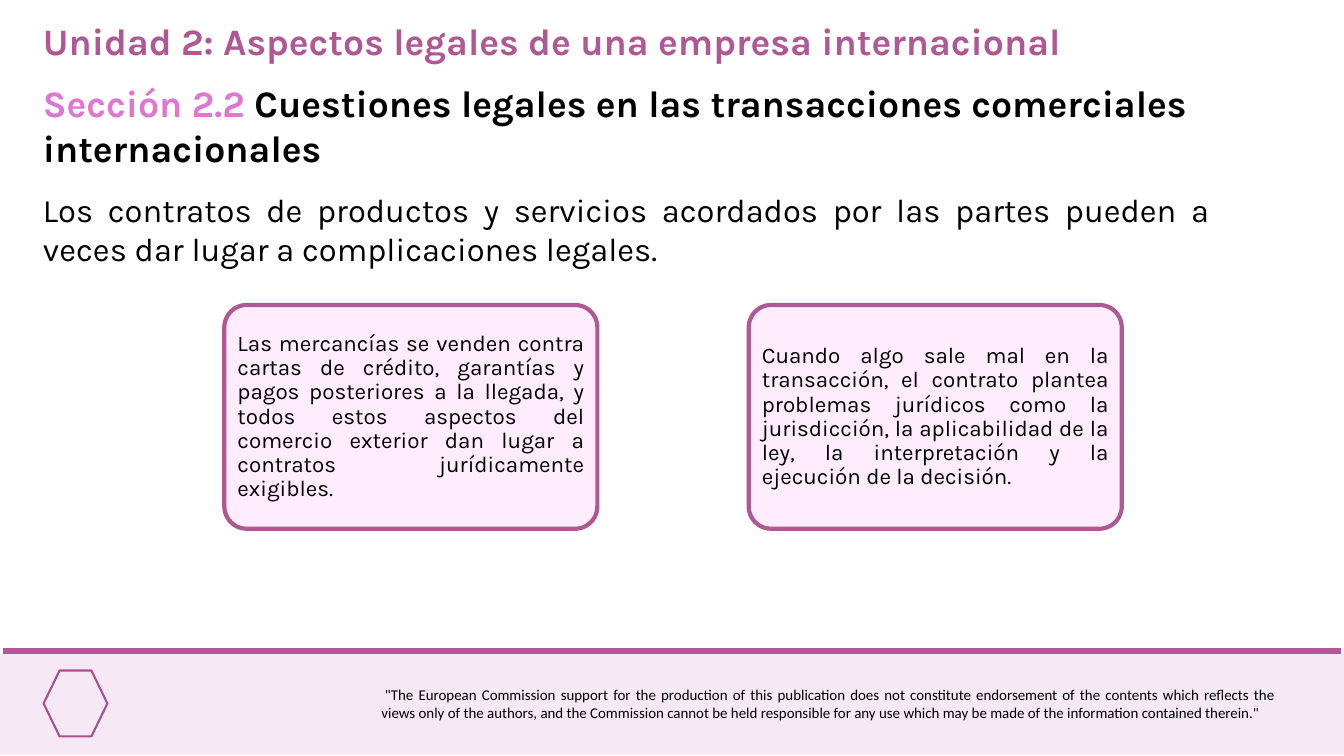
"""Build the slide on legal questions in international trade transactions."""
from dataclasses import dataclass

from lxml import etree
from pptx import Presentation
from pptx.dml.color import RGBColor
from pptx.enum.shapes import MSO_CONNECTOR, MSO_SHAPE
from pptx.enum.text import MSO_ANCHOR, MSO_AUTO_SIZE, PP_ALIGN
from pptx.oxml.ns import qn
from pptx.shapes.autoshape import Shape
from pptx.slide import Slide
from pptx.text.text import TextFrame
from pptx.util import Cm, Pt

LEFT, JUSTIFY = PP_ALIGN.LEFT, PP_ALIGN.JUSTIFY
TOP, MIDDLE = MSO_ANCHOR.TOP, MSO_ANCHOR.MIDDLE
NO_AUTOFIT = MSO_AUTO_SIZE.NONE
STRAIGHT = MSO_CONNECTOR.STRAIGHT
RECTANGLE = MSO_SHAPE.RECTANGLE
ROUNDED = MSO_SHAPE.ROUNDED_RECTANGLE
HEXAGON = MSO_SHAPE.HEXAGON


@dataclass(frozen=True)
class Theme:
    """Colours, fonts and type sizes of the slide."""
    accent: RGBColor = RGBColor(0xB0, 0x58, 0x94)
    emblem: RGBColor = RGBColor(0xAB, 0x4E, 0x8E)
    section: RGBColor = RGBColor(0xE0, 0x76, 0xD1)
    band: RGBColor = RGBColor(0xF6, 0xE9, 0xF5)
    card: RGBColor = RGBColor(0xFF, 0xEC, 0xFC)
    ink: RGBColor = RGBColor(0, 0, 0)
    main_font: str = "Karla"
    note_font: str = "Calibri"
    heading: int = 40
    intro: int = 35
    card_text: int = 24
    note: int = 16


@dataclass(frozen=True)
class Box:
    """Position and size in centimetres."""
    left: float
    top: float
    width: float
    height: float

    def lengths(self) -> tuple[Cm, Cm, Cm, Cm]:
        """Return the four measures as lengths."""
        return Cm(self.left), Cm(self.top), Cm(self.width), Cm(self.height)


@dataclass(frozen=True)
class TextStyle:
    """Paragraph formatting of one text."""
    size: int
    color: RGBColor = Theme.ink
    font: str = Theme.main_font
    bold: bool = False
    align: PP_ALIGN = LEFT
    anchor: MSO_ANCHOR = TOP
    line_spacing: float = 1.0
    indent: float = 0


THEME = Theme()
UNIT_STYLE = TextStyle(THEME.heading, THEME.accent, bold=True)
SECTION_STYLE = TextStyle(THEME.heading, bold=True)
INTRO_STYLE = TextStyle(THEME.intro, align=JUSTIFY)
CARD_STYLE = TextStyle(THEME.card_text, align=JUSTIFY, anchor=MIDDLE, line_spacing=0.9)
NOTE_STYLE = TextStyle(THEME.note, font=THEME.note_font, align=JUSTIFY, indent=0.13)

UNIT = "Unidad 2: Aspectos legales de una empresa internacional"
SECTION_NUMBER = "Sección 2.2 "
SECTION_NAME = "Cuestiones legales en las transacciones comerciales internacionales"
INTRO = (
    "Los contratos de productos y servicios acordados por las partes pueden a veces "
    "dar lugar a complicaciones legales."
)
CARDS = (
    "Las mercancías se venden contra cartas de crédito, garantías y pagos posteriores "
    "a la llegada, y todos estos aspectos del comercio exterior dan lugar a contratos "
    "jurídicamente exigibles.",
    "Cuando algo sale mal en la transacción, el contrato plantea problemas jurídicos "
    "como la jurisdicción, la aplicabilidad de la ley, la interpretación y la ejecución "
    "de la decisión.",
)
DISCLAIMER = (
    '"The European Commission support for the production of this publication does not '
    "constitute endorsement of the contents which reflects the views only of the authors, "
    "and the Commission cannot be held responsible for any use which may be made of the "
    'information contained therein."'
)

SLIDE_WIDTH, SLIDE_HEIGHT = 50.8, 28.58
FIRST_CARD = Box(8.48, 11.53, 14.1, 8.46)
CARD_PITCH = 19.82
RULE_TOP, RULE_MARGIN = 24.61, 0.13


def write(frame: TextFrame, style: TextStyle, *parts: str) -> None:
    """Fill a frame with one paragraph made of the given runs."""
    frame.word_wrap = True
    frame.auto_size = NO_AUTOFIT
    frame.vertical_anchor = style.anchor
    paragraph = frame.paragraphs[0]
    properties = paragraph._p.get_or_add_pPr()
    properties.set("marL", "0")
    properties.set("indent", str(Cm(style.indent)))
    paragraph.alignment = style.align
    paragraph.line_spacing = style.line_spacing
    paragraph.space_before = Pt(0)
    etree.SubElement(properties, qn("a:buNone"))
    font = paragraph.font
    font.name, font.size, font.bold = style.font, Pt(style.size), style.bold
    font.color.rgb = style.color
    for part in parts:
        paragraph.add_run().text = part


def place(shape: Shape, box: Box) -> None:
    """Move and size a placeholder."""
    shape.left, shape.top, shape.width, shape.height = box.lengths()


def add_text(slide: Slide, box: Box, style: TextStyle, *parts: str) -> TextFrame:
    """Add a text box and return its frame."""
    frame = slide.shapes.add_textbox(*box.lengths()).text_frame
    write(frame, style, *parts)
    return frame


def add_panel(slide: Slide, kind: MSO_SHAPE, box: Box, fill: RGBColor,
              line: RGBColor | None = None, weight: float = 0) -> Shape:
    """Add a flat filled shape, outlined when a line colour is given."""
    panel = slide.shapes.add_shape(kind, *box.lengths())
    panel.shadow.inherit = False
    panel.fill.solid()
    panel.fill.fore_color.rgb = fill
    if line is None:
        panel.line.fill.background()
    else:
        panel.line.color.rgb = line
        panel.line.width = Pt(weight)
    return panel


def add_card(slide: Slide, box: Box, text: str) -> None:
    """Add a rounded card with its text."""
    card = add_panel(slide, ROUNDED, box, THEME.card, THEME.accent, 4.5)
    card.adjustments[0] = 0.1
    frame = card.text_frame
    frame.margin_left = frame.margin_right = Cm(0.25)
    frame.margin_top = frame.margin_bottom = Cm(0.25)
    write(frame, CARD_STYLE, text)


def add_footer(slide: Slide) -> None:
    """Add the footer band, its rule, the emblem and the disclaimer."""
    add_panel(slide, RECTANGLE, Box(0, 24.69, SLIDE_WIDTH, 3.84), THEME.band)
    rule = slide.shapes.add_connector(
        STRAIGHT, Cm(RULE_MARGIN), Cm(RULE_TOP), Cm(SLIDE_WIDTH - RULE_MARGIN), Cm(RULE_TOP))
    rule.line.color.rgb = THEME.accent
    rule.line.width = Pt(6.75)
    etree.SubElement(rule._element.spPr, qn("a:effectLst"))
    add_panel(slide, HEXAGON, Box(1.65, 25.35, 2.41, 2.49), THEME.band, THEME.emblem, 2.25)
    add_text(slide, Box(14.17, 25.78, 34.29, 1.63), NOTE_STYLE, DISCLAIMER)


def main() -> None:
    """Build and save the presentation."""
    deck = Presentation()
    deck.slide_width, deck.slide_height = Cm(SLIDE_WIDTH), Cm(SLIDE_HEIGHT)
    slide = deck.slides.add_slide(deck.slide_layouts[1])
    unit, intro = slide.placeholders
    place(unit, Box(1.37, 0.56, 39.67, 1.96))
    write(unit.text_frame, UNIT_STYLE, UNIT)
    place(intro, Box(1.37, 7.04, 44.65, 9.02))
    write(intro.text_frame, INTRO_STYLE, INTRO)

    add_footer(slide)
    section = add_text(slide, Box(1.37, 2.9, 50.7, 3.68), SECTION_STYLE,
                       SECTION_NUMBER, SECTION_NAME)
    section.paragraphs[0].runs[0].font.color.rgb = THEME.section
    for index, text in enumerate(CARDS):
        left = FIRST_CARD.left + index * CARD_PITCH
        add_card(slide, Box(left, FIRST_CARD.top, FIRST_CARD.width, FIRST_CARD.height), text)
    deck.save("out.pptx")


if __name__ == "__main__":
    main()
